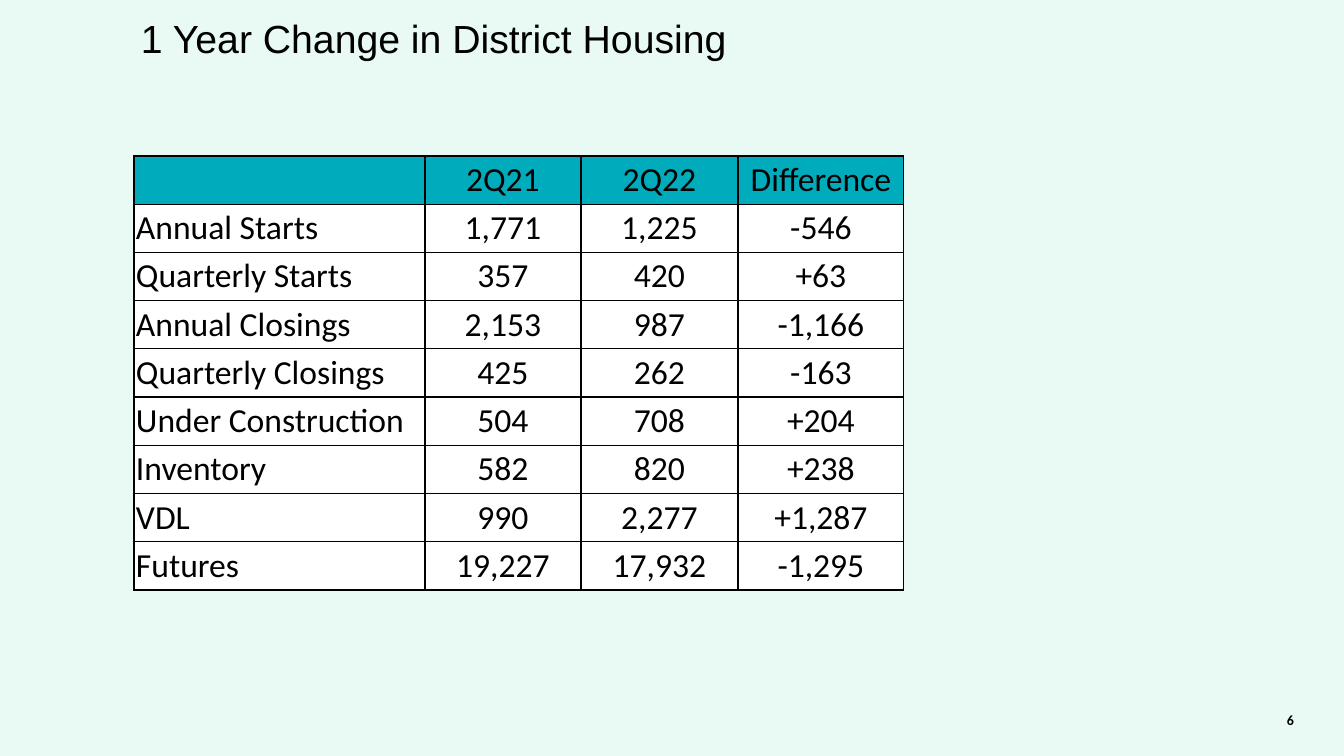
"""Build the slide on one-year change in district housing."""
import pptx
import pptx.dml.color
import pptx.enum.text
import pptx.oxml
import pptx.oxml.ns
import pptx.util

TITLE = "1 Year Change in District Housing"
PAGE = "6"
ROWS = [
    ("", "2Q21", "2Q22", "Difference"),
    ("Annual Starts", "1,771", "1,225", "-546"),
    ("Quarterly Starts", "357", "420", "+63"),
    ("Annual Closings", "2,153", "987", "-1,166"),
    ("Quarterly Closings", "425", "262", "-163"),
    ("Under Construction", "504", "708", "+204"),
    ("Inventory", "582", "820", "+238"),
    ("VDL", "990", "2,277", "+1,287"),
    ("Futures", "19,227", "17,932", "-1,295"),
]
SLIDE = (1344, 756)
TITLE_BOX = (141, 14, 756, 101)
PAGE_BOX = (1002, 700, 302, 40)
TABLE_AT = (134, 156)
TABLE_HEIGHT = 434
COLUMNS = (291, 156, 157, 166)
CELL_INSET = (2, 1, 2, 1)
NO_INSET = (0, 0, 0, 0)
PAGE_INSET = (10, 5, 10, 5)

THEME = {
    "background": "E9FAF4",
    "header": "00ABBC",
    "body": "FFFFFF",
    "text": "000000",
    "border": "000000",
    "border_pt": 1,
    "title": {"name": "Arial", "size": pptx.util.Pt(28), "bold": False},
    "cell": {"name": "Calibri", "size": pptx.util.Pt(24), "bold": False},
    "page": {"name": "Calibri", "size": pptx.util.Pt(10), "bold": True},
}
ALIGN = pptx.enum.text.PP_ALIGN
ANCHOR = pptx.enum.text.MSO_ANCHOR
EMU_PER_PX = 914400 / 100.8


def px(length):
    """Turn pixels into EMU."""
    return pptx.util.Emu(round(length * EMU_PER_PX))


def paint(fill, color):
    """Fill with a solid theme colour."""
    fill.solid()
    fill.fore_color.rgb = pptx.dml.color.RGBColor.from_string(THEME[color])


def set_attrs(obj, values):
    """Set each named value on an object."""
    for name, value in values.items():
        setattr(obj, name, value)


def inset(obj, sides):
    """Set left, top, right and bottom margins."""
    names = ("margin_left", "margin_top", "margin_right", "margin_bottom")
    set_attrs(obj, dict(zip(names, map(px, sides))))


def write(tf, text, style, align):
    """Write one formatted paragraph."""
    p = tf.paragraphs[0]
    p.alignment = align
    if text:
        r = p.add_run()
        r.text = text
    set_attrs(p.font, THEME[style])
    for r in p.runs:
        set_attrs(r.font, THEME[style])
        paint(r.font.fill, "text")


def add_borders(cell):
    """Draw a line on all four sides of a cell."""
    width = pptx.util.Pt(THEME["border_pt"])
    for i, side in enumerate("LRTB"):
        line = pptx.oxml.parse_xml(
            f'<a:ln{side} {pptx.oxml.ns.nsdecls("a")} w="{width}"><a:solidFill>'
            f'<a:srgbClr val="{THEME["border"]}"/></a:solidFill></a:ln{side}>'
        )
        cell._tc.get_or_add_tcPr().insert(i, line)


def add_title(s):
    """Place and format the title."""
    sp = s.shapes.title
    set_attrs(sp, dict(zip(("left", "top", "width", "height"), map(px, TITLE_BOX))))
    tf = sp.text_frame
    set_attrs(tf, {
        "word_wrap": True,
        "auto_size": pptx.enum.text.MSO_AUTO_SIZE.NONE,
        "vertical_anchor": ANCHOR.TOP,
    })
    inset(tf, NO_INSET)
    write(tf, TITLE, "title", ALIGN.LEFT)


def add_housing_table(s):
    """Add the table of housing counts."""
    size = (sum(COLUMNS), TABLE_HEIGHT)
    frame = s.shapes.add_table(len(ROWS), len(COLUMNS), *map(px, TABLE_AT + size))
    table = frame.table
    for column, width in zip(table.columns, COLUMNS):
        column.width = px(width)
    for i, values in enumerate(ROWS):
        table.rows[i].height = px(TABLE_HEIGHT / len(ROWS))
        for j, text in enumerate(values):
            cell = table.cell(i, j)
            cell.vertical_anchor = ANCHOR.MIDDLE
            inset(cell, NO_INSET if i and j else CELL_INSET)
            write(cell.text_frame, text, "cell", ALIGN.CENTER if j else ALIGN.LEFT)
            paint(cell.fill, "body" if i else "header")
            add_borders(cell)


def add_page_number(s):
    """Add the page number at the lower right."""
    tf = s.shapes.add_textbox(*map(px, PAGE_BOX)).text_frame
    set_attrs(tf, {"word_wrap": True, "vertical_anchor": ANCHOR.MIDDLE})
    inset(tf, PAGE_INSET)
    write(tf, PAGE, "page", ALIGN.RIGHT)


def main():
    """Build and save the slide."""
    prs = pptx.Presentation()
    prs.slide_width, prs.slide_height = map(px, SLIDE)
    s = prs.slides.add_slide(prs.slide_layouts[5])
    paint(s.background.fill, "background")
    add_title(s)
    add_housing_table(s)
    add_page_number(s)
    prs.save("out.pptx")


if __name__ == "__main__":
    main()
